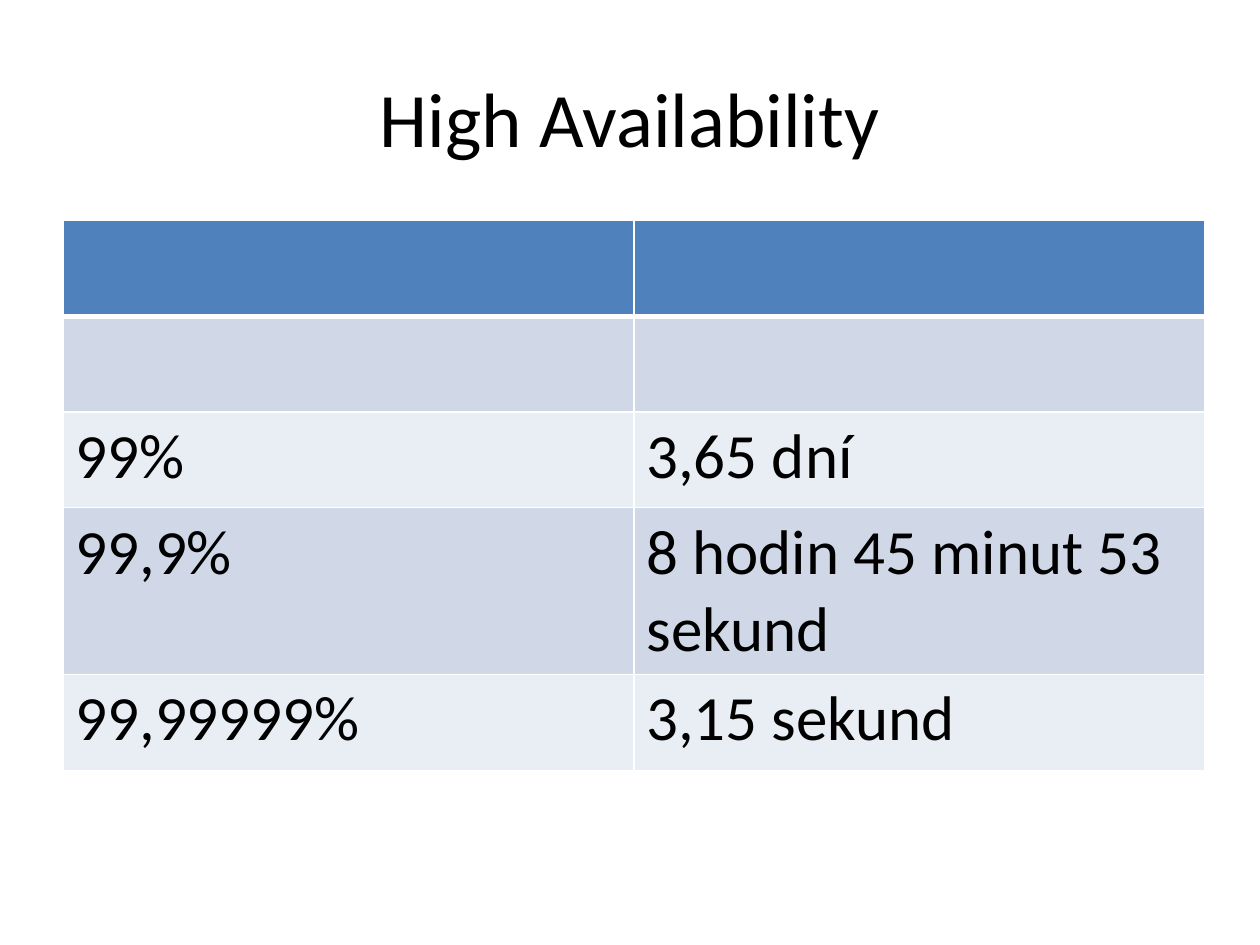
from lxml import etree
from pptx import Presentation
from pptx.dml.color import RGBColor
from pptx.enum.text import MSO_ANCHOR, PP_ALIGN
from pptx.oxml.ns import qn
from pptx.util import Inches, Pt

BLACK = RGBColor(0x00, 0x00, 0x00)
WHITE = RGBColor(0xFF, 0xFF, 0xFF)
HEADER_BLUE = RGBColor(0x4F, 0x81, 0xBD)
BAND_DARK = RGBColor(0xD0, 0xD8, 0xE8)
BAND_LIGHT = RGBColor(0xE9, 0xED, 0xF4)

ROWS = [
    ("", ""),
    ("", ""),
    ("99%", "3,65 dní"),
    ("99,9%", "8 hodin 45 minut 53 sekund"),
    ("99,99999%", "3,15 sekund"),
]


def add_run(paragraph, text, size):
    run = paragraph.add_run()
    run.text = text
    run.font.name = "Calibri"
    run.font.size = Pt(size)
    run.font.color.rgb = BLACK


def add_border(cell, side, width):
    properties = cell._tc.get_or_add_tcPr()
    line = etree.SubElement(properties, qn(f"a:ln{side}"), w=str(Pt(width)))
    fill = etree.SubElement(line, qn("a:solidFill"))
    etree.SubElement(fill, qn("a:srgbClr"), val=str(WHITE))


presentation = Presentation()
presentation.slide_width = Inches(10)
presentation.slide_height = Inches(7.5)
slide = presentation.slides.add_slide(presentation.slide_layouts[5])
slide.background.fill.solid()
slide.background.fill.fore_color.rgb = WHITE

# Title
title = slide.shapes.title
title.left, title.top = Inches(0.5), Inches(0.3)
title.width, title.height = Inches(9), Inches(1.25)
title.text_frame.vertical_anchor = MSO_ANCHOR.MIDDLE
title_paragraph = title.text_frame.paragraphs[0]
title_paragraph.alignment = PP_ALIGN.CENTER
add_run(title_paragraph, "High Availability", 44)

# Availability table
table = slide.shapes.add_table(
    len(ROWS), 2, Inches(0.5), Inches(1.75), Inches(9.06), Inches(3.8)
).table
for column in table.columns:
    column.width = Inches(4.53)

for row_index, texts in enumerate(ROWS):
    table.rows[row_index].height = Inches(0.76)
    if row_index == 0:
        color = HEADER_BLUE
    else:
        color = BAND_DARK if row_index % 2 else BAND_LIGHT
    for column_index, text in enumerate(texts):
        cell = table.cell(row_index, column_index)
        # A thick line separates the header from the body
        add_border(cell, "L", 1)
        add_border(cell, "R", 1)
        add_border(cell, "T", 3 if row_index == 1 else 1)
        add_border(cell, "B", 3 if row_index == 0 else 1)
        cell.fill.solid()
        cell.fill.fore_color.rgb = color
        if text:
            add_run(cell.text_frame.paragraphs[0], text, 36)

presentation.save("out.pptx")
